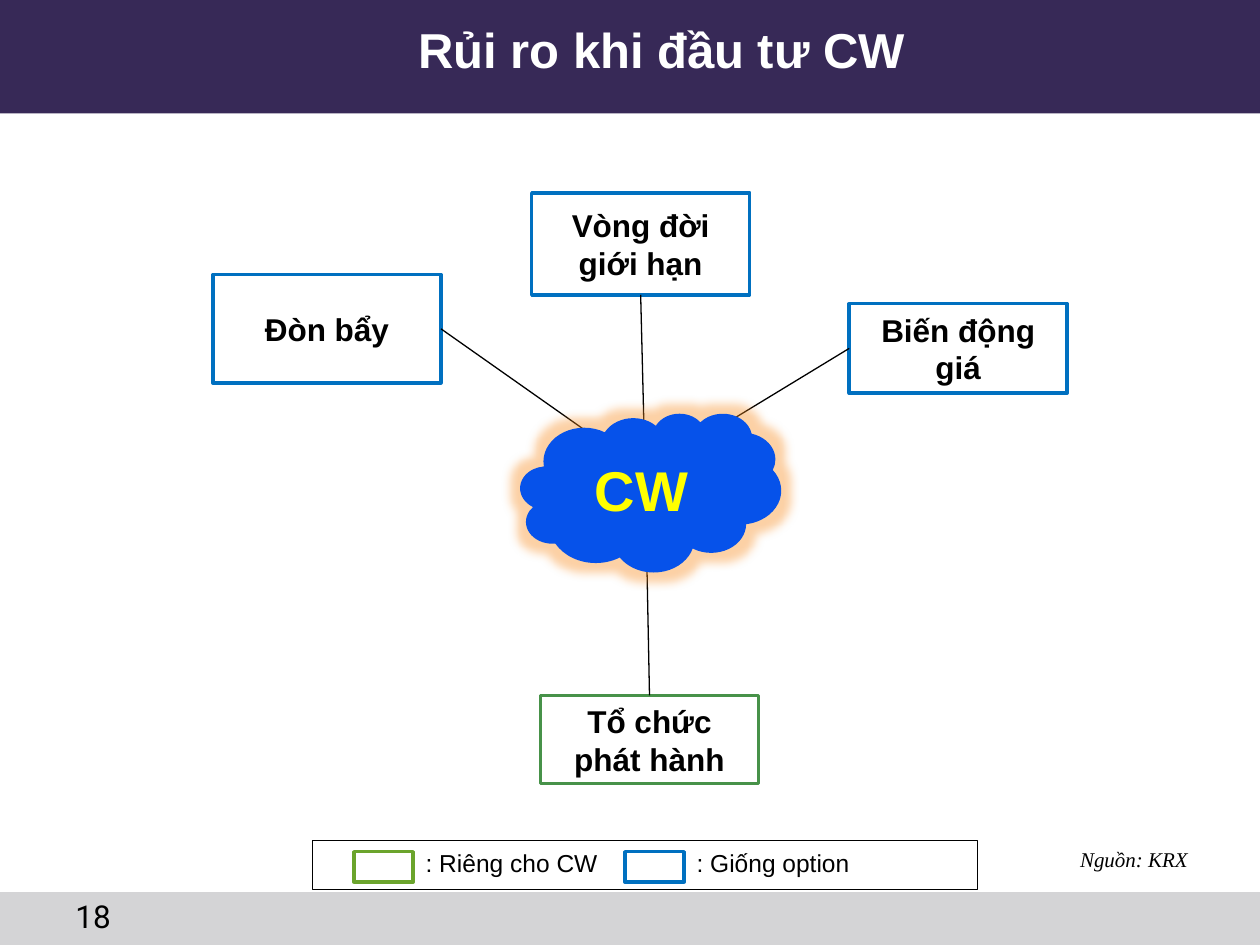
from dataclasses import dataclass

import pptx
import pptx.dml.color
import pptx.enum.shapes
import pptx.enum.text
import pptx.oxml
import pptx.oxml.ns
import pptx.util

Inches = pptx.util.Inches
Shape = pptx.enum.shapes.MSO_SHAPE
Align = pptx.enum.text.PP_ALIGN
Anchor = pptx.enum.text.MSO_ANCHOR
TOP, LEFT, BOTTOM, RIGHT = range(4)


@dataclass(frozen=True)
class Theme:
    header: str = "372957"
    footer: str = "D4D4D6"
    shared: str = "0070C0"
    issuer: str = "479249"
    issuer_key: str = "6BA42C"
    cloud: str = "0652EA"
    glow: str = "F88C20"
    accent: str = "FFFF00"
    black: str = "000000"
    white: str = "FFFFFF"
    sans: str = "Arial"
    serif: str = "Times New Roman"
    number_font: str = "Roboto"
    title_size: float = 28
    cloud_size: float = 32
    body_size: float = 18
    key_size: float = 14
    source_size: float = 12


THEME = Theme()


@dataclass(frozen=True)
class Area:
    left: float
    top: float
    width: float
    height: float

    def lengths(self) -> list:
        return [Inches(n) for n in (self.left, self.top, self.width, self.height)]


@dataclass(frozen=True)
class TextStyle:
    size: float
    color: str = THEME.black
    font: str = THEME.sans
    bold: bool = False
    italic: bool = False
    align: Align = Align.LEFT
    anchor: Anchor = Anchor.TOP
    wrap: bool = True


@dataclass(frozen=True)
class Risk:
    label: str
    area: Area
    color: str
    side: int  # connection site facing the cloud


@dataclass(frozen=True)
class LegendKey:
    label: str
    left: float
    text_width: float
    color: str


RISK_STYLE = TextStyle(THEME.body_size, bold=True, align=Align.CENTER, anchor=Anchor.MIDDLE)
RISKS = [
    Risk("Tổ chức phát hành", Area(4.29, 5.52, 1.73, 0.7), THEME.issuer, TOP),
    Risk("Đòn bẩy", Area(1.69, 2.18, 1.81, 0.86), THEME.shared, RIGHT),
    Risk("Vòng đời giới hạn", Area(4.22, 1.53, 1.73, 0.81), THEME.shared, BOTTOM),
    Risk("Biến động giá", Area(6.74, 2.41, 1.73, 0.71), THEME.shared, LEFT),
]
LEGEND = [
    LegendKey(": Riêng cho CW", 2.81, 1.57, THEME.issuer_key),
    LegendKey(": Giống option", 4.96, 1.42, THEME.shared),
]
HUB = (5.12, 3.75)


def rgb(color: str) -> pptx.dml.color.RGBColor:
    return pptx.dml.color.RGBColor.from_string(color)


def write(shape, text: str, style: TextStyle) -> None:
    frame = shape.text_frame
    frame.word_wrap = style.wrap
    frame.vertical_anchor = style.anchor
    paragraph = frame.paragraphs[0]
    paragraph.alignment = style.align
    run = paragraph.add_run()
    run.text = text
    font = run.font
    font.name, font.size = style.font, pptx.util.Pt(style.size)
    font.bold, font.italic = style.bold, style.italic
    font.color.rgb = rgb(style.color)


def add_label(slide, area: Area, text: str, style: TextStyle) -> None:
    write(slide.shapes.add_textbox(*area.lengths()), text, style)


def add_block(slide, kind: Shape, area: Area, fill: str | None = None,
              outline: str | None = None, weight: float = 2):
    block = slide.shapes.add_shape(kind, *area.lengths())
    block.shadow.inherit = False
    if fill:
        block.fill.solid()
        block.fill.fore_color.rgb = rgb(fill)
    else:
        block.fill.background()
    if outline:
        block.line.color.rgb = rgb(outline)
        block.line.width = pptx.util.Pt(weight)
    else:
        block.line.fill.background()
    return block


def add_risk(slide, risk: Risk) -> None:
    """Draw a risk box and its line to the hub behind the cloud."""
    box = add_block(slide, Shape.RECTANGLE, risk.area, THEME.white, risk.color)
    write(box, risk.label, RISK_STYLE)
    hub_x, hub_y = (Inches(n) for n in HUB)
    line = slide.shapes.add_connector(
        pptx.enum.shapes.MSO_CONNECTOR.STRAIGHT, hub_x, hub_y, hub_x, hub_y)
    line.begin_connect(box, risk.side)
    line.line.color.rgb = rgb(THEME.black)
    line.line.width = pptx.util.Pt(0.75)
    pptx.oxml.ns.qn("a:effectLst")
    line._element.spPr.append(
        pptx.oxml.parse_xml(f"<a:effectLst {pptx.oxml.ns.nsdecls('a')}/>"))


def add_glow(shape, color: str, radius: int, opacity: int) -> None:
    effects = shape._element.spPr.find(pptx.oxml.ns.qn("a:effectLst"))
    effects.append(pptx.oxml.parse_xml(
        f'<a:glow {pptx.oxml.ns.nsdecls("a")} rad="{radius}"><a:srgbClr val="{color}">'
        f'<a:alpha val="{opacity * 1000}"/></a:srgbClr></a:glow>'))


def add_legend(slide) -> None:
    style = TextStyle(THEME.key_size, wrap=False)
    for key in LEGEND:
        add_block(slide, Shape.RECTANGLE, Area(key.left, 6.76, 0.47, 0.24), THEME.white, key.color)
        add_label(slide, Area(key.left + 0.47, 6.68, key.text_width, 0.34), key.label, style)
    add_block(slide, Shape.RECTANGLE, Area(2.48, 6.67, 5.28, 0.39),
              outline=THEME.black, weight=0.5)


def main() -> None:
    deck = pptx.Presentation()
    deck.slide_width, deck.slide_height = Inches(10), Inches(7.5)
    slide = deck.slides.add_slide(deck.slide_layouts[6])

    add_block(slide, Shape.RECTANGLE, Area(0, 0, 10, 0.9), THEME.header)
    add_block(slide, Shape.RECTANGLE, Area(0, 7.08, 10, 0.42), THEME.footer)
    add_label(slide, Area(0.5, 7.07, 2.33, 0.35), "18",
              TextStyle(THEME.body_size, font=THEME.number_font))

    for risk in RISKS:
        add_risk(slide, risk)
    cloud = add_block(slide, Shape.CLOUD, Area(4.13, 3.28, 2.07, 1.26), THEME.cloud)
    add_glow(cloud, THEME.glow, Inches(0.15), 40)
    write(cloud, "CW", TextStyle(THEME.cloud_size, THEME.accent, bold=True,
                                 align=Align.CENTER, anchor=Anchor.MIDDLE))

    add_legend(slide)
    add_label(slide, Area(0.75, 0.08, 9, 0.62), "Rủi ro khi đầu tư CW",
              TextStyle(THEME.title_size, THEME.white, bold=True,
                        align=Align.CENTER, anchor=Anchor.MIDDLE))
    add_label(slide, Area(8, 6.67, 2, 0.3), "Nguồn: KRX",
              TextStyle(THEME.source_size, font=THEME.serif, italic=True, align=Align.CENTER))
    deck.save("out.pptx")


if __name__ == "__main__":
    main()
